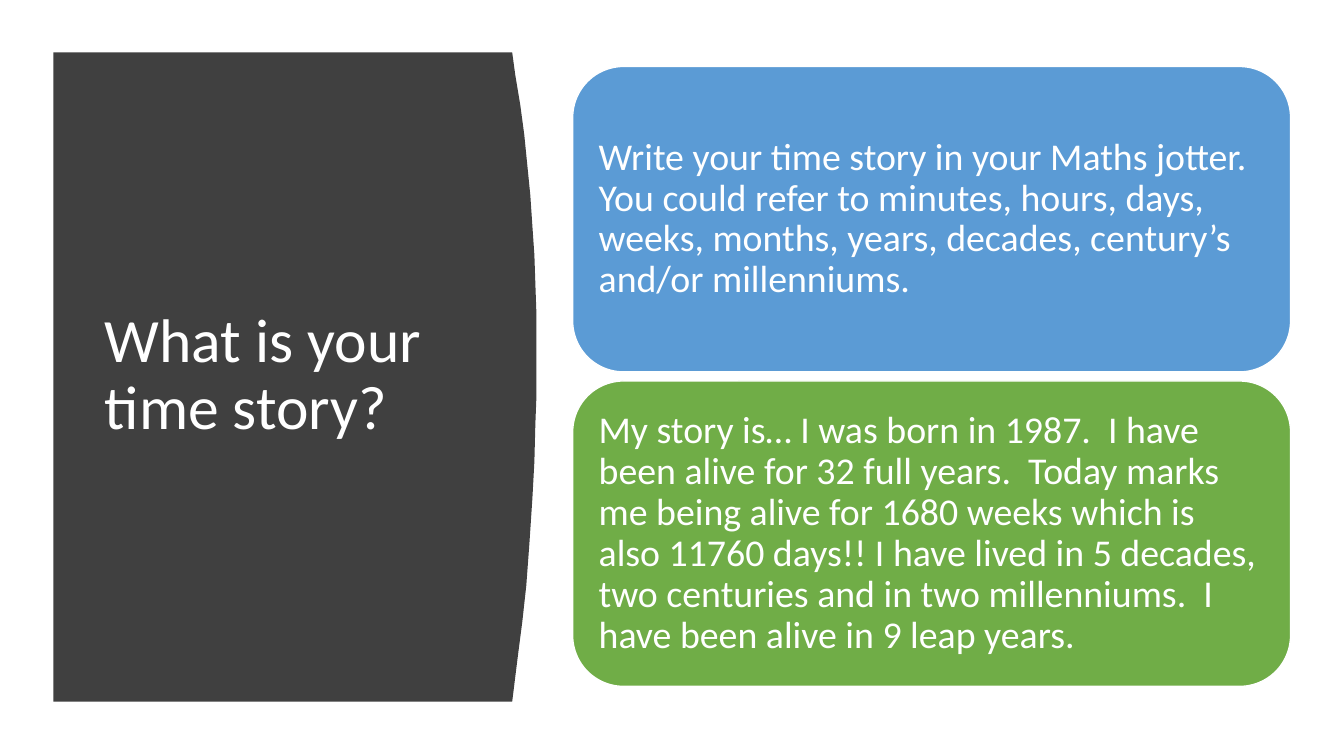
from pptx import Presentation
from pptx.dml.color import RGBColor
from pptx.enum.shapes import MSO_SHAPE
from pptx.enum.text import MSO_ANCHOR, PP_ALIGN
from pptx.util import Inches, Pt

WHITE = RGBColor(0xFF, 0xFF, 0xFF)
CHARCOAL = RGBColor(0x40, 0x40, 0x40)
BLUE = RGBColor(0x5B, 0x9B, 0xD5)
GREEN = RGBColor(0x70, 0xAD, 0x47)

PANEL_OUTLINE = [
    (0.53, 0.52), (5.08, 0.52), (5.11, 0.74), (5.16, 1.04), (5.2, 1.34),
    (5.23, 1.64), (5.26, 1.94), (5.28, 2.24), (5.3, 2.53), (5.31, 2.82),
    (5.32, 3.11), (5.32, 3.94), (5.31, 4.2), (5.3, 4.58), (5.28, 4.95),
    (5.25, 5.4), (5.22, 5.81), (5.18, 6.17), (5.14, 6.48), (5.11, 6.72),
    (5.08, 6.96), (0.53, 6.96),
]

CARDS = [
    (BLUE, "Write your time story in your Maths jotter.  You could refer to "
           "minutes, hours, days, weeks, months, years, decades, century’s "
           "and/or millenniums."),
    (GREEN, "My story is… I was born in 1987.  I have been alive for 32 full "
            "years.  Today marks me being alive for 1680 weeks which is also "
            "11760 days!! I have lived in 5 decades, two centuries and in two "
            "millenniums.  I have been alive in 9 leap years."),
]
CARD_TOP, CARD_PITCH = 0.66, 3.12


class SlideBuilder:
    font = "Calibri"
    color = WHITE

    def __init__(self, prs):
        self.s = prs.slides.add_slide(prs.slide_layouts[5])

    def set_text(self, sp, text, size):
        tf = sp.text_frame
        tf.text = text
        tf.word_wrap = True
        tf.vertical_anchor = MSO_ANCHOR.MIDDLE
        p = tf.paragraphs[0]
        p.alignment = PP_ALIGN.LEFT
        p.line_spacing = 0.9
        font = p.runs[0].font
        font.name, font.size = self.font, Pt(size)
        font.color.rgb = self.color

    def title(self, text, left, top, width, height):
        sp = self.s.shapes.title
        sp.left, sp.top = Inches(left), Inches(top)
        sp.width, sp.height = Inches(width), Inches(height)
        self.set_text(sp, text, 44)

    def panel(self, points, color):
        """Draw a filled outline behind the title."""
        start, *rest = [(Inches(x), Inches(y)) for x, y in points]
        builder = self.s.shapes.build_freeform(*start)
        builder.add_line_segments(rest)
        sp = builder.convert_to_shape()
        sp.shadow.inherit = False
        sp.fill.solid()
        sp.fill.fore_color.rgb = color
        sp.line.fill.background()
        self.s.shapes.title.element.addprevious(sp.element)

    def card(self, text, color, left, top, width, height):
        sp = self.s.shapes.add_shape(
            MSO_SHAPE.ROUNDED_RECTANGLE,
            Inches(left), Inches(top), Inches(width), Inches(height))
        sp.shadow.inherit = False
        sp.fill.solid()
        sp.fill.fore_color.rgb = color
        sp.line.color.rgb = WHITE
        sp.line.width = Pt(1)
        tf = sp.text_frame
        tf.margin_left = tf.margin_right = Inches(0.11)
        tf.margin_top = tf.margin_bottom = Inches(0.11)
        self.set_text(sp, text, 27)


def main():
    prs = Presentation()
    prs.slide_width, prs.slide_height = Inches(13.33), Inches(7.5)
    slide = SlideBuilder(prs)
    slide.panel(PANEL_OUTLINE, CHARCOAL)
    slide.title("What is your time story?", 0.94, 1.11, 3.74, 5.24)
    for i, (color, text) in enumerate(CARDS):
        slide.card(text, color, 5.68, CARD_TOP + i * CARD_PITCH, 7.12, 3.03)
    prs.save("out.pptx")


if __name__ == "__main__":
    main()
